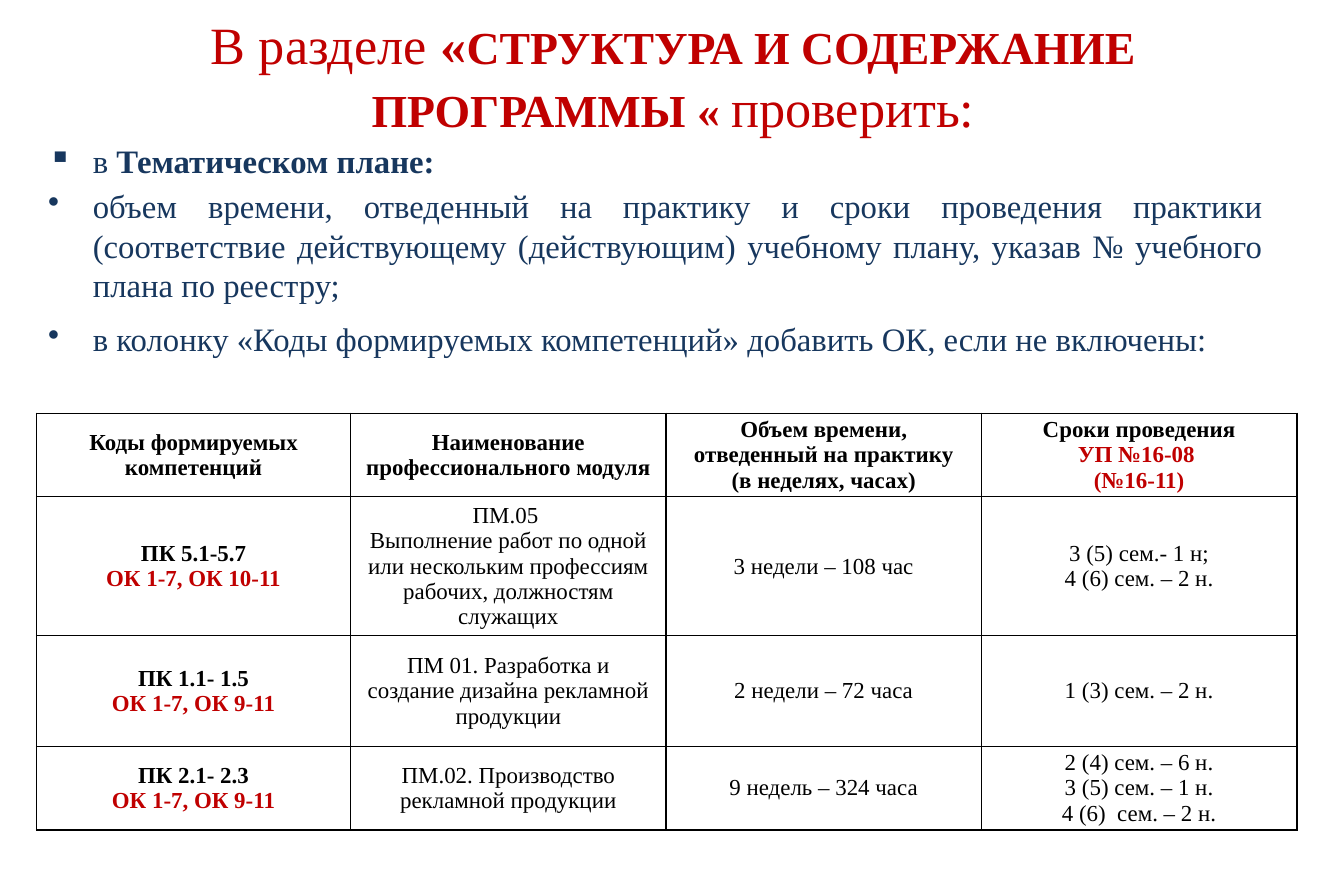
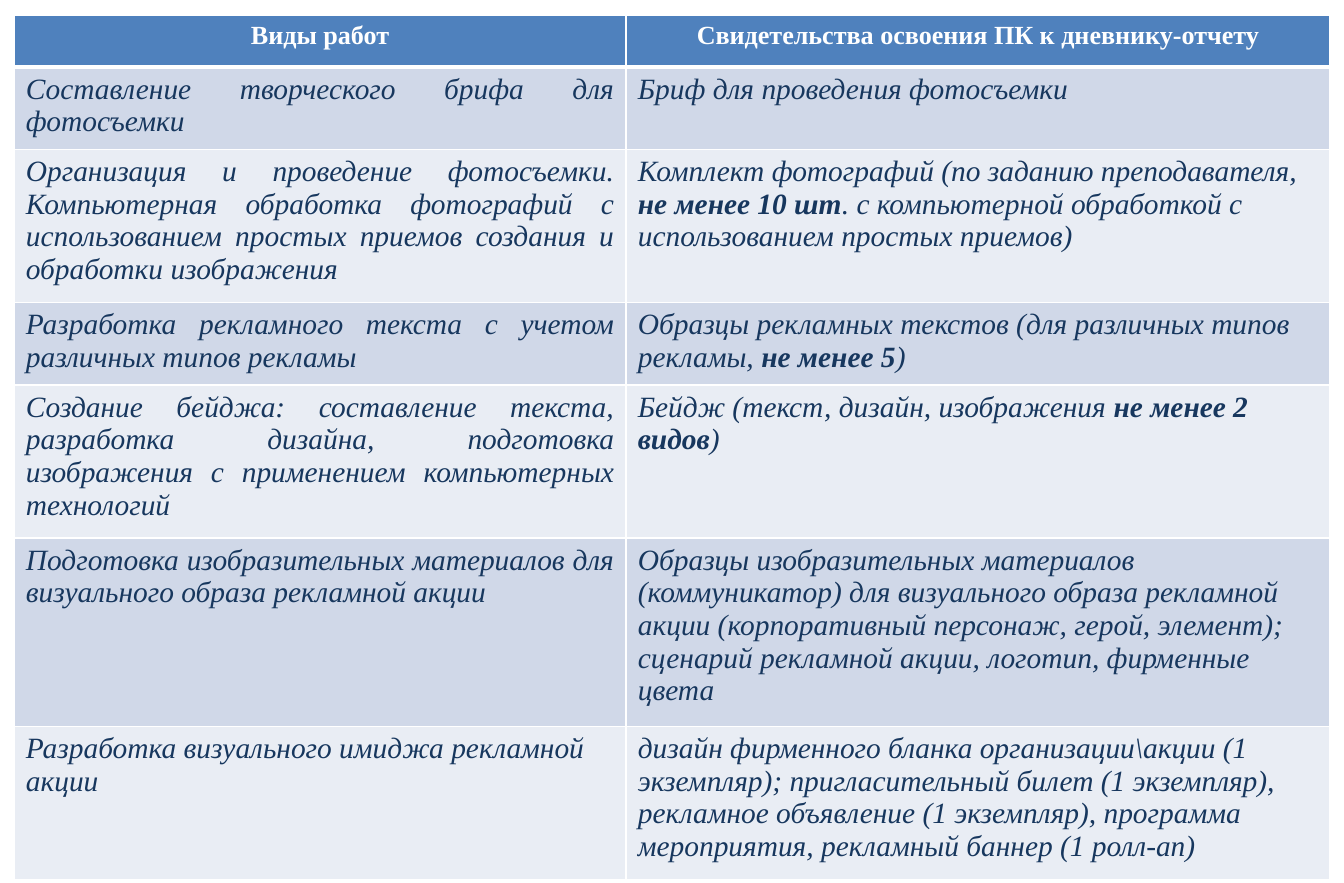
from lxml import etree
from pptx import Presentation
from pptx.dml.color import RGBColor
from pptx.enum.text import MSO_ANCHOR, PP_ALIGN
from pptx.oxml import parse_xml
from pptx.oxml.ns import nsdecls, qn
from pptx.util import Inches, Pt

FONT = "Times New Roman"
RED = RGBColor(0xC0, 0x00, 0x00)
NAVY = RGBColor(0x17, 0x37, 0x5E)
BLUE = RGBColor(0x4F, 0x81, 0xBD)
BAND_DARK = RGBColor(0xD0, 0xD8, 0xE8)
BAND_LIGHT = RGBColor(0xE9, 0xED, 0xF4)
BLACK = RGBColor(0x00, 0x00, 0x00)
WHITE = RGBColor(0xFF, 0xFF, 0xFF)


def write(tf, text, size, color, align, italic=False):
    """Add one paragraph and return it; text between asterisks becomes bold."""
    p = tf.paragraphs[-1]
    if p.runs:
        p = tf.add_paragraph()
    p.alignment = align
    for i, part in enumerate(text.split("*")):
        if part:
            r = p.add_run()
            r.text = part
            r.font.name, r.font.size = FONT, Pt(size)
            r.font.bold, r.font.italic = i % 2 == 1, italic
            r.font.color.rgb = color
    return p


def add_grid(s, left, top, widths, heights, line, head_rule=1):
    """Add a table with 1 pt borders; head_rule is the width under row one."""
    table = s.shapes.add_table(len(heights), len(widths), Inches(left), Inches(top),
                               Inches(sum(widths)), Inches(sum(heights))).table
    table.first_row = table.horz_banding = False
    for col, width in zip(table.columns, widths):
        col.width = Inches(width)
    for i, (row, height) in enumerate(zip(table.rows, heights)):
        row.height = Inches(height)
        for cell in row.cells:
            tc_pr = cell._tc.get_or_add_tcPr()
            for n, side in enumerate(("lnL", "lnR", "lnT", "lnB")):
                weight = head_rule if i == 0 and side == "lnB" else 1
                tc_pr.insert(n, parse_xml(
                    f'<a:{side} {nsdecls("a")} w="{Pt(weight)}"><a:solidFill>'
                    f'<a:srgbClr val="{line}"/></a:solidFill></a:{side}>'))
    return table


prs = Presentation()
prs.slide_width, prs.slide_height = Inches(11.42), Inches(7.5)
blank = prs.slide_layouts[6]

# Slide 1: checks in the thematic plan
s = prs.slides.add_slide(blank)

TITLE = [
    ("В разделе", 32, False),
    (" «", 32, True),
    ("СТРУКТУРА И СОДЕРЖАНИЕ ПРОГРАММЫ « ", 28, True),
    ("проверить:", 32, False),
]
tf = s.shapes.add_textbox(Inches(0.58), Inches(0.13), Inches(10.28), Inches(1.02)).text_frame
tf.word_wrap = True
tf.vertical_anchor = MSO_ANCHOR.MIDDLE
p = tf.paragraphs[0]
p.alignment = PP_ALIGN.CENTER
for text, size, bold in TITLE:
    r = p.add_run()
    r.text = text
    r.font.name, r.font.size, r.font.bold = FONT, Pt(size), bold
    r.font.color.rgb = RED

# Bullet, space before in points, text
CHECKS = [
    ("▪", 0, "в* Тематическом плане:*"),
    ("•", 3.5, "объем времени, отведенный на практику и сроки проведения практики "
     "(соответствие действующему (действующим) учебному плану, указав № учебного "
     "плана по реестру;"),
    ("•", 9, "в колонку «Коды формируемых компетенций» добавить ОК, если не включены:"),
]
tf = s.shapes.add_textbox(Inches(0.31), Inches(1.15), Inches(10.52), Inches(2.28)).text_frame
tf.word_wrap = True
for bullet, gap, text in CHECKS:
    p = write(tf, text, 20, NAVY, PP_ALIGN.JUSTIFY)
    p.space_before = Pt(gap)
    p_pr = p._p.get_or_add_pPr()
    p_pr.set("marL", str(Inches(0.38)))
    p_pr.set("indent", str(-Inches(0.38)))
    etree.SubElement(p_pr, qn("a:buChar"), char=bullet)

PLAN = [
    ["*Коды формируемых компетенций*", "*Наименование профессионального модуля*",
     "*Объем времени, отведенный на практику*\n*(в неделях, часах)*",
     "*Сроки проведения*\n*УП №16-08 *\n*(№16-11)*"],
    ["*ПК 5.1-5.7*\n*ОК 1-7, ОК 10-11*",
     "ПМ.05 \nВыполнение работ по одной или нескольким профессиям рабочих, "
     "должностям служащих",
     "3 недели – 108 час", "3 (5) сем.- 1 н;\n4 (6) сем. – 2 н."],
    ["*ПК 1.1- 1.5*\n*ОК 1-7, ОК 9-11*",
     "ПМ 01. Разработка и создание дизайна рекламной продукции",
     "2 недели – 72 часа", "1 (3) сем. – 2 н."],
    ["*ПК 2.1- 2.3*\n*ОК 1-7, ОК 9-11*", "ПМ.02. Производство рекламной продукции",
     "9 недель – 324 часа", "2 (4) сем. – 6 н.\n3 (5) сем. – 1 н.\n4 (6)  сем. – 2 н."],
]
RED_STARTS = ("*ОК", "*УП", "*(№")
table = add_grid(s, 0.31, 3.51, [2.67, 2.68, 2.68, 2.68], [0.71, 1.18, 0.94, 0.71], BLACK)
for row, texts in zip(table.rows, PLAN):
    for cell, text in zip(row.cells, texts):
        cell.fill.background()
        cell.vertical_anchor = MSO_ANCHOR.MIDDLE
        cell.margin_left = cell.margin_right = Inches(0.09)
        cell.margin_top = cell.margin_bottom = 0
        for line in text.split("\n"):
            color = RED if line.startswith(RED_STARTS) else BLACK
            write(cell.text_frame, line, 14, color, PP_ALIGN.CENTER)

# Slide 2: kinds of work and the evidence for each
s = prs.slides.add_slide(blank)

HEADINGS = ["*Виды работ*", "*Свидетельства освоения ПК к дневнику-отчету*"]
WORKS = [
    ["Составление творческого брифа для фотосъемки", "Бриф для проведения фотосъемки"],
    ["Организация и проведение фотосъемки. Компьютерная обработка фотографий с "
     "использованием простых приемов создания и обработки изображения",
     "Комплект фотографий (по заданию преподавателя, *не менее 10 шт*. с компьютерной "
     "обработкой с использованием простых приемов)"],
    ["Разработка рекламного текста с учетом различных типов рекламы",
     "Образцы рекламных текстов (для различных типов рекламы, *не менее 5*)"],
    ["Создание бейджа: составление текста, разработка дизайна, подготовка изображения "
     "с применением компьютерных технологий",
     "Бейдж (текст, дизайн, изображения *не менее 2 видов*)"],
    ["Подготовка изобразительных материалов для визуального образа рекламной акции",
     "Образцы изобразительных материалов (коммуникатор) для визуального образа рекламной "
     "акции (корпоративный персонаж, герой, элемент);\n"
     "сценарий рекламной акции, логотип, фирменные цвета"],
    ["Разработка визуального имиджа рекламной акции",
     "дизайн фирменного бланка организации\\акции (1 экземпляр); пригласительный билет "
     "(1 экземпляр), рекламное объявление (1 экземпляр), программа мероприятия, "
     "рекламный баннер (1 ролл-ап)"],
]
table = add_grid(s, 0.12, 0.13, [5.2, 5.98], [0.44, 0.68, 1.25, 0.68, 1.25, 1.39, 1.25],
                 WHITE, head_rule=3)
head, *body = table.rows
for cell, text in zip(head.cells, HEADINGS):
    cell.fill.solid()
    cell.fill.fore_color.rgb = BLUE
    write(cell.text_frame, text, 16, WHITE, PP_ALIGN.CENTER)
for n, (row, texts) in enumerate(zip(body, WORKS)):
    # Only the kinds of work are justified, except the last one
    work_align = PP_ALIGN.LEFT if n == len(WORKS) - 1 else PP_ALIGN.JUSTIFY
    for cell, text, align in zip(row.cells, texts, (work_align, PP_ALIGN.LEFT)):
        cell.fill.solid()
        cell.fill.fore_color.rgb = BAND_LIGHT if n % 2 else BAND_DARK
        for line in text.split("\n"):
            write(cell.text_frame, line, 18, NAVY, align, italic=True)

prs.save("out.pptx")
